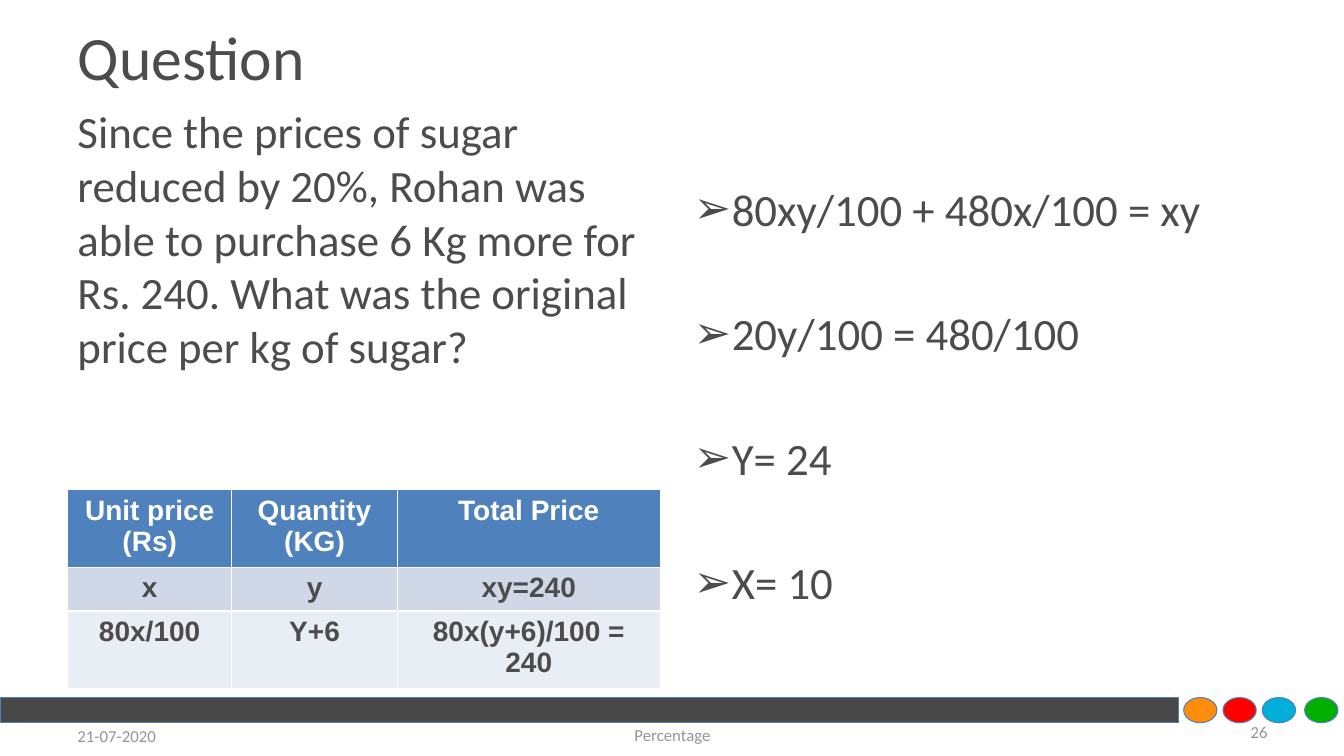
"""Build a percentage question slide with a price table and worked steps."""
from pptx import Presentation
from pptx.dml.color import RGBColor
from pptx.enum.shapes import MSO_SHAPE
from pptx.enum.text import MSO_ANCHOR, MSO_AUTO_SIZE, PP_ALIGN
from pptx.oxml.ns import qn
from pptx.util import Inches, Pt
from lxml.etree import SubElement

TEXT = RGBColor(0x4C, 0x4C, 0x4C)
FOOTER = RGBColor(0x95, 0x95, 0x95)
WHITE = RGBColor(0xFF, 0xFF, 0xFF)
BLUE = RGBColor(0x4F, 0x81, 0xBD)
BAND_DARK = RGBColor(0xD0, 0xD8, 0xE8)
BAND_LIGHT = RGBColor(0xE9, 0xED, 0xF4)
BAR = RGBColor(0x48, 0x48, 0x48)
ORANGE = RGBColor(0xFF, 0x8C, 0x0B)
RED = RGBColor(0xFF, 0x00, 0x00)
CYAN = RGBColor(0x00, 0xAE, 0xDA)
GREEN = RGBColor(0x00, 0xAF, 0x00)


def style_text(paragraph, size, color, name="Calibri", bold=False):
    for run in paragraph.runs:
        run.font.name = name
        run.font.size = Pt(size)
        run.font.bold = bold
        run.font.color.rgb = color


def add_text(slide, left, top, width, height, lines, size, color):
    text_frame = slide.shapes.add_textbox(
        Inches(left), Inches(top), Inches(width), Inches(height)).text_frame
    text_frame.word_wrap = True
    text_frame.text = "\n".join(lines)
    for paragraph in text_frame.paragraphs:
        style_text(paragraph, size, color)
    return text_frame


presentation = Presentation()
presentation.slide_width = Inches(13.33)
presentation.slide_height = Inches(7.5)
slide = presentation.slides.add_slide(presentation.slide_layouts[5])

footer_shapes = [
    (MSO_SHAPE.RECTANGLE, 0, 11.69, BAR),
    (MSO_SHAPE.OVAL, 11.74, 0.33, ORANGE),
    (MSO_SHAPE.OVAL, 12.13, 0.33, RED),
    (MSO_SHAPE.OVAL, 12.52, 0.33, CYAN),
    (MSO_SHAPE.OVAL, 12.94, 0.33, GREEN),
]
for kind, left, width, color in footer_shapes:
    shape = slide.shapes.add_shape(kind, Inches(left), Inches(6.92), Inches(width), Inches(0.25))
    shape.shadow.inherit = False
    shape.fill.solid()
    shape.fill.fore_color.rgb = color
    shape.line.color.rgb = BLUE
    shape.line.width = Pt(0.75)

title = slide.shapes.title
title.left, title.top = Inches(0.67), Inches(0.3)
title.width, title.height = Inches(12), Inches(0.5)
title.text_frame.text = "Question"
title.text_frame.auto_size = MSO_AUTO_SIZE.NONE
title.text_frame.vertical_anchor = MSO_ANCHOR.MIDDLE
title.text_frame.paragraphs[0].alignment = PP_ALIGN.LEFT
style_text(title.text_frame.paragraphs[0], 44, TEXT)

question = (
    "Since the prices of sugar reduced by 20%, Rohan was able to purchase 6 Kg more "
    "for Rs. 240. What was the original price per kg of sugar?"
)
add_text(slide, 0.67, 0.98, 5.89, 3.7, [question], 32, TEXT)

steps = ["80xy/100 + 480x/100 = xy", "20y/100 = 480/100", "Y= 24", "X= 10"]
solution = add_text(slide, 6.78, 1.75, 5.89, 4.95, steps, 32, TEXT)
for index, paragraph in enumerate(solution.paragraphs):
    properties = paragraph._p.get_or_add_pPr()
    properties.set("marL", str(Inches(0.38)))
    properties.set("indent", str(-Inches(0.38)))
    SubElement(properties, qn("a:buFont")).set("typeface", "Arial")
    SubElement(properties, qn("a:buChar")).set("char", "➢")
    if index:
        paragraph.space_before = Pt(50.5)

footers = [
    (0.67, 7.1, 3.11, "21-07-2020", PP_ALIGN.LEFT),
    (4.56, 7.09, 4.22, "Percentage", PP_ALIGN.CENTER),
    (9.56, 7.06, 3.11, "26", PP_ALIGN.RIGHT),
]
for left, top, width, text, alignment in footers:
    footer = add_text(slide, left, top, width, 0.4, [text], 12, FOOTER)
    footer.vertical_anchor = MSO_ANCHOR.MIDDLE
    footer.paragraphs[0].alignment = alignment

prices = [
    ["Unit price (Rs)", "Quantity (KG)", "Total Price"],
    ["x", "y", "xy=240"],
    ["80x/100", "Y+6", "80x(y+6)/100 = 240"],
]
row_styles = [(BLUE, WHITE), (BAND_DARK, TEXT), (BAND_LIGHT, TEXT)]
table = slide.shapes.add_table(
    3, 3, Inches(0.67), Inches(4.86), Inches(5.88), Inches(1.23)).table
for column, width in zip(table.columns, [1.63, 1.64, 2.61]):
    column.width = Inches(width)
for row, texts, (fill, color) in zip(table.rows, prices, row_styles):
    row.height = Inches(0.41)
    for cell, text in zip(row.cells, texts):
        cell.fill.solid()
        cell.fill.fore_color.rgb = fill
        cell.text_frame.text = text
        paragraph = cell.text_frame.paragraphs[0]
        paragraph.alignment = PP_ALIGN.CENTER
        style_text(paragraph, 20, color, "Arial", True)

presentation.save("out.pptx")
